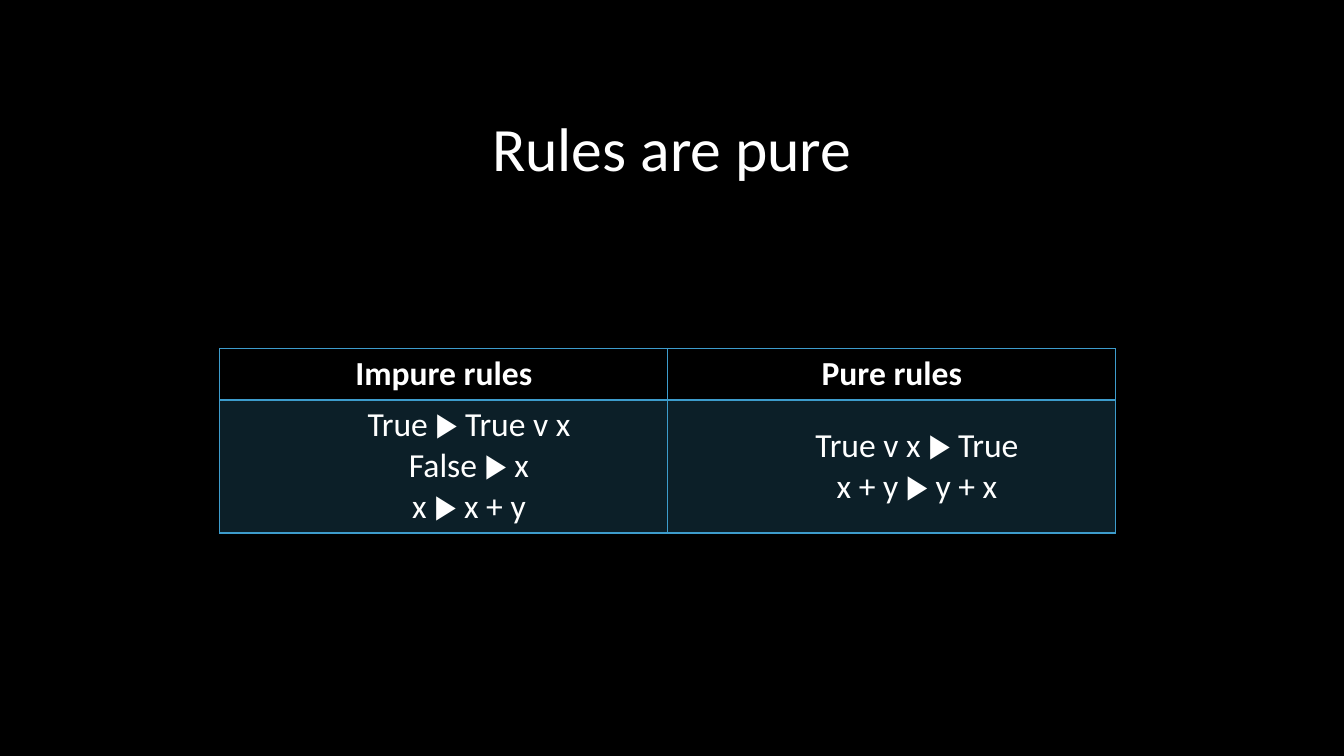
import pptx
import pptx.util
import pptx.dml.color
import pptx.enum.text
import pptx.oxml.ns
import lxml.etree

Cm = pptx.util.Cm
Pt = pptx.util.Pt
RGBColor = pptx.dml.color.RGBColor
ALIGN = pptx.enum.text.PP_ALIGN
ANCHOR = pptx.enum.text.MSO_ANCHOR
qn = pptx.oxml.ns.qn

BLACK = RGBColor(0x00, 0x00, 0x00)
WHITE = RGBColor(0xFF, 0xFF, 0xFF)
BLUE = RGBColor(0x3D, 0x9C, 0xCC)

FONT = "Calibri"
RULES = {
    "Impure rules": "True ▶ True v x\nFalse ▶ x\nx ▶ x + y",
    "Pure rules": "True v x ▶ True\nx + y ▶ y + x",
}


def set_text(frame, text, size, bold=False):
    frame.text = text
    for para in frame.paragraphs:
        para.alignment = ALIGN.CENTER
        for run in para.runs:
            run.font.name = FONT
            run.font.size = Pt(size)
            run.font.bold = bold
            run.font.color.rgb = WHITE


def add_title(slide, text):
    box = slide.shapes.add_textbox(Cm(2.33), Cm(1.01), Cm(29.21), Cm(5.64))
    frame = box.text_frame
    frame.word_wrap = True
    frame.vertical_anchor = ANCHOR.MIDDLE
    set_text(frame, text, 44)
    frame.paragraphs[0].line_spacing = 0.9


def set_edges(cell, top, bottom):
    """Draw the four cell borders; top and bottom are widths in points."""
    props = cell._tc.get_or_add_tcPr()
    widths = {"a:lnL": 1, "a:lnR": 1, "a:lnT": top, "a:lnB": bottom}
    for place, (tag, width) in enumerate(widths.items()):
        line = lxml.etree.Element(qn(tag), w=str(Pt(width)))
        fill = lxml.etree.SubElement(line, qn("a:solidFill"))
        lxml.etree.SubElement(fill, qn("a:srgbClr"), val=str(BLUE))
        props.insert(place, line)


def set_tint(cell, color, percent):
    cell.fill.solid()
    cell.fill.fore_color.rgb = color
    tone = cell._tc.tcPr.find(".//" + qn("a:srgbClr"))
    lxml.etree.SubElement(tone, qn("a:alpha"), val=str(percent * 1000))


def add_head(cell, text):
    set_text(cell.text_frame, text, 24, bold=True)
    cell.fill.background()
    set_edges(cell, 1, 2)


def add_rules(cell, text):
    set_text(cell.text_frame, text, 24)
    cell.vertical_anchor = ANCHOR.MIDDLE
    for para in cell.text_frame.paragraphs:
        para.level = 1
        props = para._p.get_or_add_pPr()
        props.set("marL", str(Cm(1.27)))
        props.set("indent", "0")
    set_tint(cell, BLUE, 20)
    set_edges(cell, 2, 1)


def add_grid(slide, rules):
    frame = slide.shapes.add_table(
        2, len(rules), Cm(5.54), Cm(8.79), Cm(22.58), Cm(4.64))
    table = frame.table
    table.horz_banding = False
    table.rows[0].height = Cm(1.29)
    table.rows[1].height = Cm(3.35)
    for col, (head, body) in enumerate(rules.items()):
        add_head(table.cell(0, col), head)
        add_rules(table.cell(1, col), body)


def main():
    deck = pptx.Presentation()
    deck.slide_width = Cm(33.87)
    deck.slide_height = Cm(19.05)
    slide = deck.slides.add_slide(deck.slide_layouts[6])

    # Black background
    slide.background.fill.solid()
    slide.background.fill.fore_color.rgb = BLACK

    # Title and table of rules
    add_title(slide, "Rules are pure")
    add_grid(slide, RULES)

    deck.save("out.pptx")


if __name__ == "__main__":
    main()
